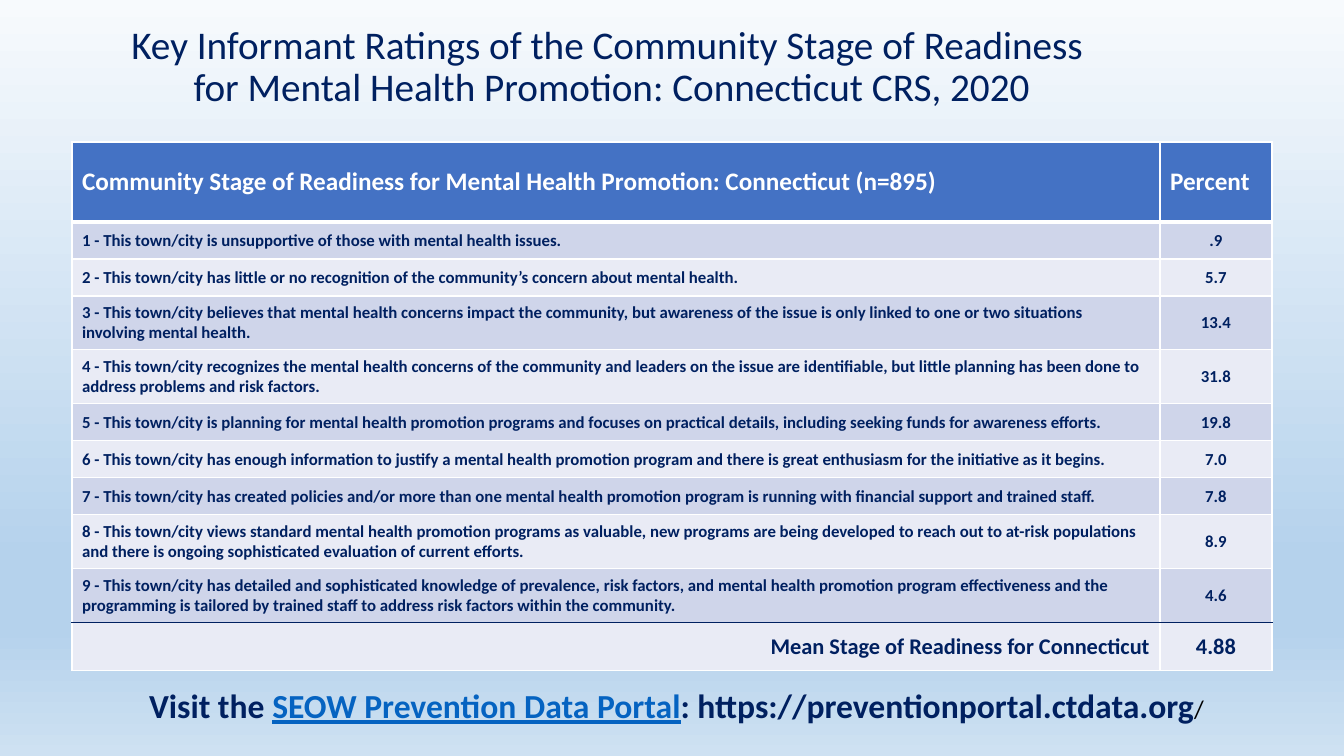
import collections
import dataclasses

import lxml.etree
import pptx
import pptx.dml.color
import pptx.enum.text
import pptx.oxml.ns
import pptx.util

Box = collections.namedtuple("Box", "left top width height")
ALIGN = pptx.enum.text.PP_ALIGN
MIDDLE = pptx.enum.text.MSO_ANCHOR.MIDDLE


@dataclasses.dataclass(frozen=True)
class Theme:
    font: str = "Calibri"
    navy: str = "002060"
    white: str = "FFFFFF"
    black: str = "000000"
    link: str = "0563C1"
    header: str = "4472C4"
    bands: tuple = ("CFD5EA", "E9EBF5")
    sky: tuple = ((0, "F7FAFD"), (74, "B5D2EC"), (83, "B5D2EC"), (100, "CEE1F2"))
    title_size: int = 28
    footer_size: int = 24
    header_size: int = 18
    mean_size: int = 16
    body_size: int = 12


THEME = Theme()

STAGES = [
    ("1 - This town/city is unsupportive of those with mental health issues.", ".9"),
    ("2 - This town/city has little or no recognition of the community’s concern about mental health.", "5.7"),
    ("3 - This town/city believes that mental health concerns impact the community, but awareness of "
     "the issue is only linked to one or two situations involving mental health.", "13.4"),
    ("4 - This town/city recognizes the mental health concerns of the community and leaders on the issue "
     "are identifiable, but little planning has been done to address problems and risk factors.", "31.8"),
    ("5 - This town/city is planning for mental health promotion programs and focuses on practical "
     "details, including seeking funds for awareness efforts.", "19.8"),
    ("6 - This town/city has enough information to justify a mental health promotion program and there "
     "is great enthusiasm for the initiative as it begins.", "7.0"),
    ("7 - This town/city has created policies and/or more than one mental health promotion program is "
     "running with financial support and trained staff.", "7.8"),
    ("8 - This town/city views standard mental health promotion programs as valuable, new programs are "
     "being developed to reach out to at-risk populations and there is ongoing sophisticated evaluation "
     "of current efforts.", "8.9"),
    ("9 - This town/city has detailed and sophisticated knowledge of prevalence, risk factors, and mental "
     "health promotion program effectiveness and the programming is tailored by trained staff to address "
     "risk factors within the community.", "4.6"),
]
HEADER = ("Community Stage of Readiness for Mental Health Promotion: Connecticut (n=895)", "Percent")
MEAN = ("Mean Stage of Readiness for Connecticut", "4.88")
TWO_LINE_STAGES = (3, 4, 8, 9)


def px(length):
    return pptx.util.Emu(round(length * 914400 / 100.8))


def add_span(para, text, size, color, bold=False, underline=False):
    span = para.add_run()
    span.text = text
    span.font.name = THEME.font
    span.font.size = pptx.util.Pt(size)
    span.font.bold = bold
    span.font.underline = underline
    span.font.color.rgb = pptx.dml.color.RGBColor.from_string(color)


def add_centred_box(page, box):
    frame = page.shapes.add_textbox(*map(px, box)).text_frame
    frame.word_wrap = True
    para = frame.paragraphs[0]
    para.alignment = ALIGN.CENTER
    return frame, para


def paint_background(page):
    fill = page.background.fill
    fill.gradient()
    fill.gradient_angle = 270
    stops = page.background._cSld.find(".//" + pptx.oxml.ns.qn("a:gsLst"))
    for stop in list(stops):
        stops.remove(stop)
    for percent, color in THEME.sky:
        stop = lxml.etree.SubElement(stops, pptx.oxml.ns.qn("a:gs"), pos=str(percent * 1000))
        lxml.etree.SubElement(stop, pptx.oxml.ns.qn("a:srgbClr"), val=color)


def add_title(page, box):
    frame, para = add_centred_box(page, box)
    frame.vertical_anchor = MIDDLE
    para.line_spacing = 0.9
    add_span(para, "Key Informant Ratings of the Community Stage of Readiness ", THEME.title_size, THEME.navy)
    para.add_line_break()
    add_span(para, "for Mental Health Promotion: Connecticut CRS, 2020", THEME.title_size, THEME.navy)


def set_borders(cell, top, bottom):
    plain = (THEME.white, 1)
    properties = cell._tc.get_or_add_tcPr()
    for side, (color, points) in zip("LRTB", (plain, plain, top, bottom)):
        line = lxml.etree.SubElement(properties, pptx.oxml.ns.qn("a:ln" + side), w=str(pptx.util.Pt(points)))
        solid = lxml.etree.SubElement(line, pptx.oxml.ns.qn("a:solidFill"))
        lxml.etree.SubElement(solid, pptx.oxml.ns.qn("a:srgbClr"), val=color)


def fill_cell(cell, text, size, color, fill, align, edges):
    set_borders(cell, *edges)
    cell.fill.solid()
    cell.fill.fore_color.rgb = pptx.dml.color.RGBColor.from_string(fill)
    cell.vertical_anchor = MIDDLE
    para = cell.text_frame.paragraphs[0]
    para.alignment = align
    add_span(para, text, size, color, bold=True)


def add_ratings_table(page, box):
    rows = [HEADER, *STAGES, MEAN]
    mean_row = len(rows) - 1
    table = page.shapes.add_table(len(rows), 2, *map(px, box)).table
    percent_width = 112
    table.columns[0].width = px(box.width - percent_width)
    table.columns[1].width = px(percent_width)
    rules = {1: (THEME.white, 3), mean_row: (THEME.navy, 1)}

    for index, texts in enumerate(rows):
        size, color = THEME.body_size, THEME.navy
        fill = THEME.bands[(index - 1) % 2]
        aligns = (ALIGN.LEFT, ALIGN.CENTER)
        height = 54 if index in TWO_LINE_STAGES else 37
        if index == 0:
            size, color, fill = THEME.header_size, THEME.white, THEME.header
            aligns = (ALIGN.LEFT, ALIGN.LEFT)
            height = 80
        elif index == mean_row:
            size = THEME.mean_size
            aligns = (ALIGN.RIGHT, ALIGN.CENTER)
            height = 48
        table.rows[index].height = px(height)
        edges = [rules.get(edge, (THEME.white, 1)) for edge in (index, index + 1)]
        for column, (text, align) in enumerate(zip(texts, aligns)):
            cell = table.cell(index, column)
            fill_cell(cell, text, size, color, fill, align, edges)
            if column == 1 and 0 < index < mean_row:
                cell.margin_left = cell.margin_right = px(5)
                cell.margin_top = cell.margin_bottom = 0


def add_footer(page, box):
    para = add_centred_box(page, box)[1]
    add_span(para, "Visit the ", THEME.footer_size, THEME.navy, bold=True)
    add_span(para, "SEOW Prevention Data Portal", THEME.footer_size, THEME.link, bold=True, underline=True)
    add_span(para, ": https://preventionportal.ctdata.org", THEME.footer_size, THEME.navy, bold=True)
    add_span(para, "/", THEME.header_size, THEME.black)


def main():
    deck = pptx.Presentation()
    deck.slide_width, deck.slide_height = px(1344), px(756)
    page = deck.slides.add_slide(deck.slide_layouts[6])
    paint_background(page)
    add_title(page, Box(93, 20, 1037, 96))
    add_ratings_table(page, Box(72, 142, 1200, 529))
    add_footer(page, Box(93, 680, 1167, 50))
    deck.save("out.pptx")


if __name__ == "__main__":
    main()
